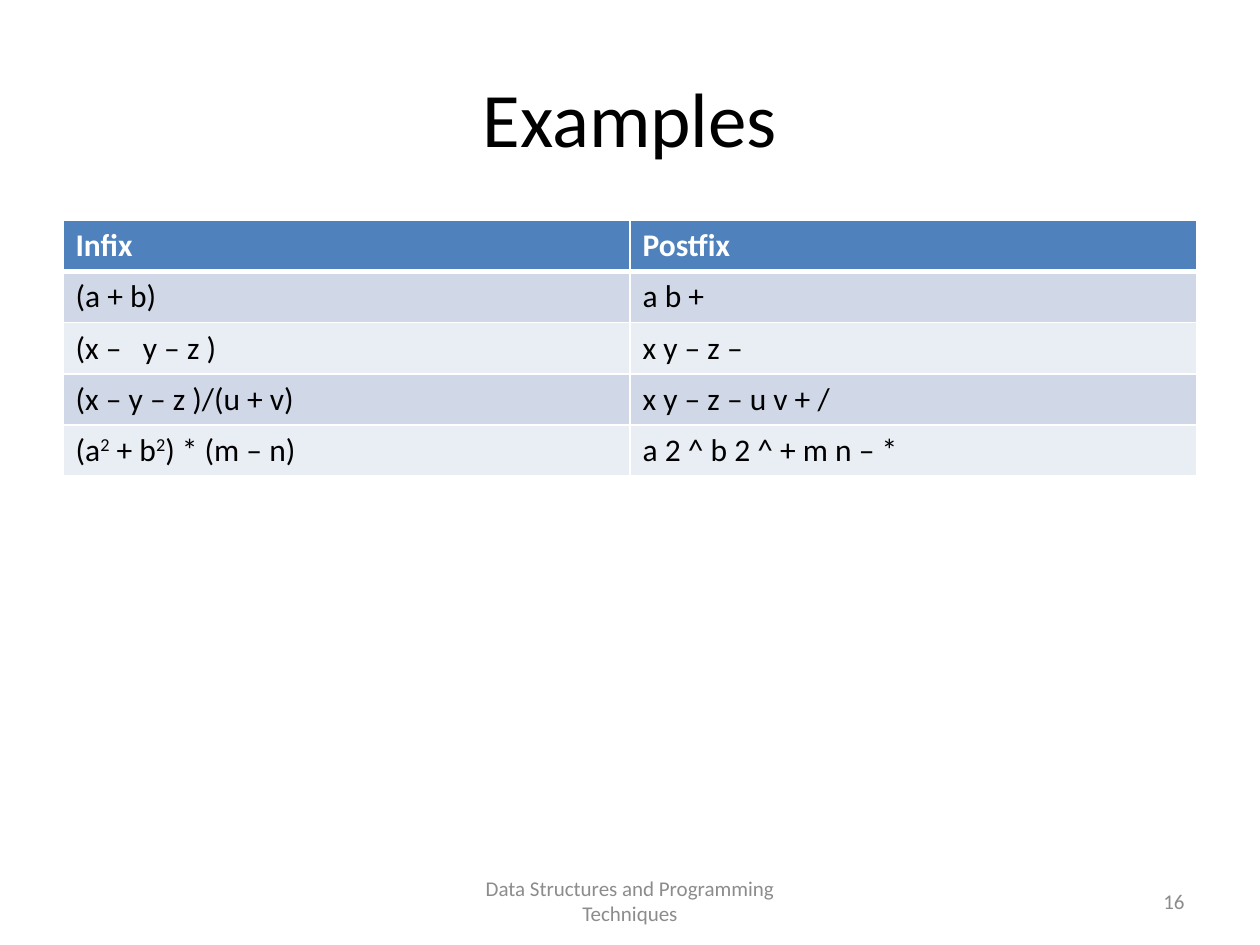
from pptx import Presentation
from pptx.dml.color import RGBColor
from pptx.enum.text import MSO_ANCHOR, PP_ALIGN
from pptx.oxml.ns import qn
from pptx.util import Pt
from lxml.etree import SubElement

# Content: a cell is a list of (text, is_superscript) spans or a plain string
TITLE = "Examples"
ROWS = [
    ("Infix", "Postfix"),
    ("(a + b)", "a b +"),
    ("(x –   y – z )", "x y – z –"),
    ("(x – y – z )/(u + v)", "x y – z – u v + /"),
    ([("(a", False), ("2", True), (" + b", False), ("2", True),
      (") * (m – n)", False)], "a 2 ^ b 2 ^ + m n – *"),
]
FOOTERS = [
    ("Data Structures and Programming Techniques", (246, 500.4, 228, 28.8), PP_ALIGN.CENTER),
    ("16", (516, 500.4, 168, 28.8), PP_ALIGN.RIGHT),
]

THEME = {
    "font": "Calibri",
    "header_fill": "4F81BD",
    "bands": ("D0D8E8", "E9EDF4"),
    "border": "FFFFFF",
    "title": {"size": 44, "color": "000000"},
    "header": {"size": 18, "color": "FFFFFF", "bold": True},
    "body": {"size": 18, "color": "000000", "bold": False},
    "footer": {"size": 12, "color": "8C8C8C"},
}
MARGIN, TABLE_TOP, ROW_HEIGHT = 36, 126, 29.2
SLIDE_WIDTH, SLIDE_HEIGHT = 720, 540


def write(frame, content, style, align=PP_ALIGN.LEFT):
    para = frame.paragraphs[0]
    para.alignment = align
    spans = [(content, False)] if isinstance(content, str) else content
    look = {"name": THEME["font"], "size": Pt(style["size"]), "bold": style.get("bold", False)}
    for text, raised in spans:
        span = para.add_run()
        span.text = text
        for name, value in look.items():
            setattr(span.font, name, value)
        span.font.color.rgb = RGBColor.from_string(style["color"])
        if raised:
            span.font._element.set("baseline", "30000")


def set_borders(cell, widths):
    properties = cell._tc.get_or_add_tcPr()
    for index, (side, width) in enumerate(widths.items()):
        line = properties.makeelement(qn(f"a:ln{side}"), {"w": str(Pt(width))})
        fill = SubElement(line, qn("a:solidFill"))
        SubElement(fill, qn("a:srgbClr"), {"val": THEME["border"]})
        properties.insert(index, line)


def place(shape, bounds):
    for name, value in zip(("left", "top", "width", "height"), bounds):
        setattr(shape, name, Pt(value))


deck = Presentation()
deck.slide_width, deck.slide_height = Pt(SLIDE_WIDTH), Pt(SLIDE_HEIGHT)
page = deck.slides.add_slide(deck.slide_layouts[5])
table_width = SLIDE_WIDTH - 2 * MARGIN

# Title
title = page.shapes.title
place(title, (MARGIN, 21.6, table_width, 90))
title.text_frame.vertical_anchor = MSO_ANCHOR.MIDDLE
write(title.text_frame, TITLE, THEME["title"], PP_ALIGN.CENTER)

# Table of expressions
table = page.shapes.add_table(
    len(ROWS), len(ROWS[0]), Pt(MARGIN), Pt(TABLE_TOP),
    Pt(table_width), Pt(ROW_HEIGHT * len(ROWS))).table
for row_index, row in enumerate(ROWS):
    is_header = row_index == 0
    fill = THEME["header_fill"] if is_header else THEME["bands"][(row_index - 1) % 2]
    widths = {"L": 1, "R": 1, "T": 3 if row_index == 1 else 1, "B": 3 if is_header else 1}
    for column_index, content in enumerate(row):
        cell = table.cell(row_index, column_index)
        cell.fill.solid()
        cell.fill.fore_color.rgb = RGBColor.from_string(fill)
        set_borders(cell, widths)
        write(cell.text_frame, content, THEME["header" if is_header else "body"])

# Footer and page number
for text, bounds, align in FOOTERS:
    box = page.shapes.add_textbox(*map(Pt, bounds))
    box.text_frame.word_wrap = True
    box.text_frame.vertical_anchor = MSO_ANCHOR.MIDDLE
    write(box.text_frame, text, THEME["footer"], align)

deck.save("out.pptx")
